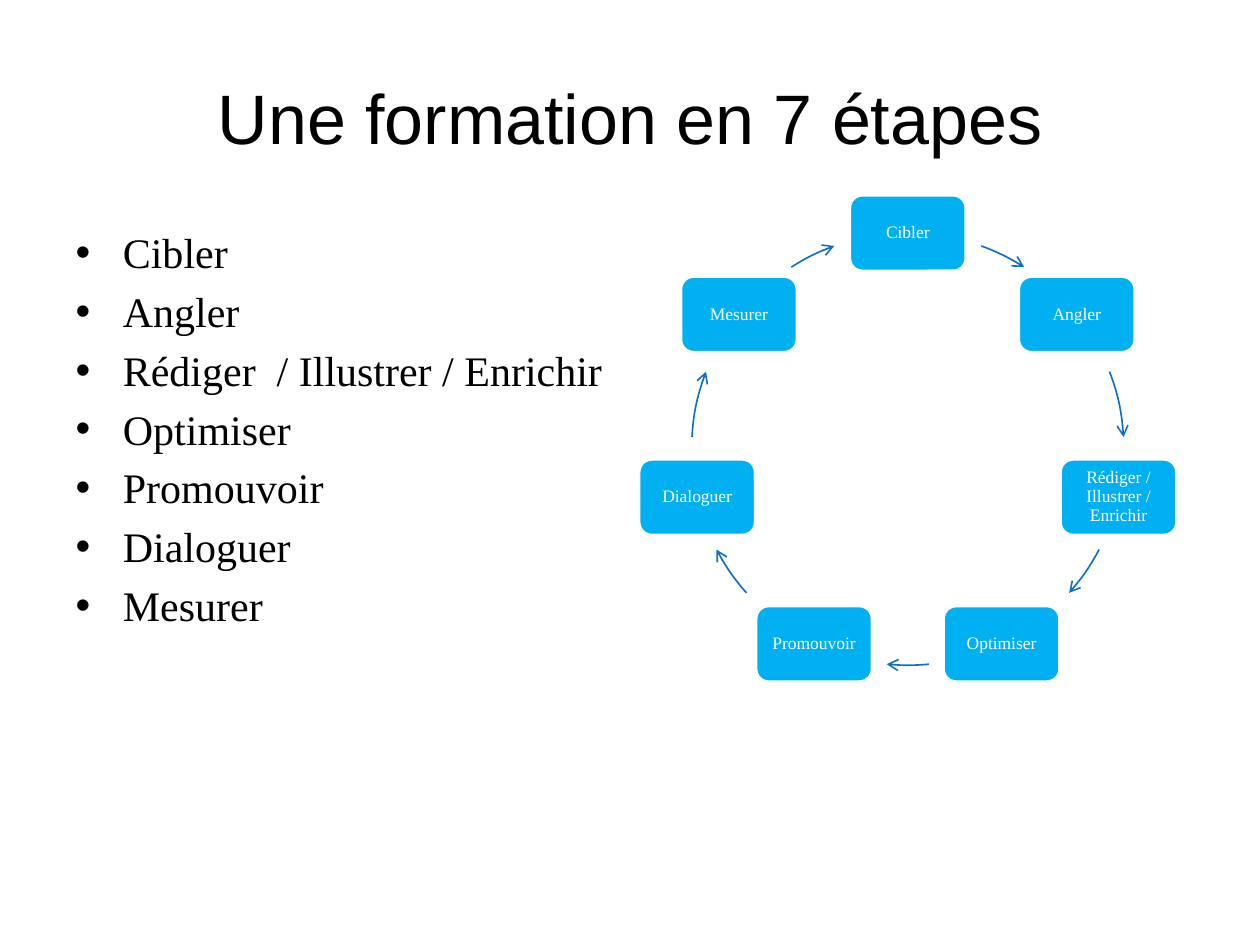
from math import cos, radians, sin

from lxml import etree
from pptx import Presentation
from pptx.dml.color import RGBColor
from pptx.enum.shapes import MSO_SHAPE
from pptx.enum.text import MSO_ANCHOR, PP_ALIGN
from pptx.oxml.ns import qn
from pptx.util import Inches, Pt

ROUND_BOX = MSO_SHAPE.ROUNDED_RECTANGLE
ARC = MSO_SHAPE.ARC
MIDDLE = MSO_ANCHOR.MIDDLE
CENTER = PP_ALIGN.CENTER

BLACK = RGBColor(0x00, 0x00, 0x00)
WHITE = RGBColor(0xFF, 0xFF, 0xFF)
SKY = RGBColor(0x00, 0xB0, 0xF0)
BLUE = RGBColor(0x0F, 0x6F, 0xC6)

SANS = "Arial"
SERIF = "Times New Roman"

COLUMNS, ROWS = 20, 30
CENTER_COL, CENTER_ROW = 14.41, 14.26
RADIUS_COLS, RADIUS_ROWS = 3.43, 6.86
BOX_COLS, BOX_ROWS = 1.84, 2.4

STEPS = ["Cibler", "Angler", "Rédiger / Illustrer / Enrichir", "Optimiser",
         "Promouvoir", "Dialoguer", "Mesurer"]
BULLETS = [step.replace("Rédiger", "Rédiger ") for step in STEPS]
RIGHT_ARCS = [(19.9, 32.6), (69, 86.8), (117.7, 131.7)]
BOTTOM_ARC = (174.4, 185.6)
LEFT_ARCS = [(360 - end, 360 - start) for start, end in reversed(RIGHT_ARCS)]
ARCS = RIGHT_ARCS + [BOTTOM_ARC] + LEFT_ARCS


def write(p, text, *, font=SERIF, size=24, color=BLACK, align=None, spacing=None):
    r = p.add_run()
    r.text = text
    r.font.name = font
    r.font.size = Pt(size)
    r.font.color.rgb = color
    p.alignment = align
    p.line_spacing = spacing


class Deck:
    def __init__(self):
        self.prs = Presentation()
        self.prs.slide_width = Inches(10)
        self.prs.slide_height = Inches(7.5)
        self.col = self.prs.slide_width / COLUMNS
        self.row = self.prs.slide_height / ROWS
        self.s = self.prs.slides.add_slide(self.prs.slide_layouts[1])

    def area(self, left, top, width, height):
        return (round(left * self.col), round(top * self.row),
                round(width * self.col), round(height * self.row))

    def place(self, sp, *cells):
        sp.left, sp.top, sp.width, sp.height = self.area(*cells)

    def title(self, text):
        sp = self.s.shapes.title
        self.place(sp, 1, 1.2, 18, 5)
        sp.text_frame.vertical_anchor = MIDDLE
        write(sp.text_frame.paragraphs[0], text, font=SANS, size=40, align=CENTER)

    def bullets(self, items):
        sp = self.s.placeholders[1]
        self.place(sp, 1, 7, 18, 19.8)
        tf = sp.text_frame
        for i, item in enumerate(items):
            p = tf.add_paragraph() if i else tf.paragraphs[0]
            write(p, item)

    def shape(self, kind, *cells):
        sp = self.s.shapes.add_shape(kind, *self.area(*cells))
        sp.shadow.inherit = False
        return sp

    def step(self, text, angle):
        left = CENTER_COL + RADIUS_COLS * sin(radians(angle)) - BOX_COLS / 2
        top = CENTER_ROW - RADIUS_ROWS * cos(radians(angle)) - BOX_ROWS / 2
        sp = self.shape(ROUND_BOX, left, top, BOX_COLS, BOX_ROWS)
        sp.fill.solid()
        sp.fill.fore_color.rgb = SKY
        sp.line.color.rgb = WHITE
        sp.line.width = Pt(1.5)
        tf = sp.text_frame
        tf.word_wrap = True
        tf.vertical_anchor = MIDDLE
        (tf.margin_left, tf.margin_top,
         tf.margin_right, tf.margin_bottom) = self.area(0.08, 0.16, 0.08, 0.16)
        write(tf.paragraphs[0], text, size=10, color=WHITE, align=CENTER, spacing=0.9)

    def arrow(self, start, end):
        sp = self.shape(ARC, CENTER_COL - RADIUS_COLS, CENTER_ROW - RADIUS_ROWS,
                        2 * RADIUS_COLS, 2 * RADIUS_ROWS)
        for i, angle in enumerate((start, end)):
            sp.adjustments[i] = (angle - 90) % 360 * 0.6
        sp.fill.background()
        sp.line.color.rgb = BLUE
        sp.line.width = Pt(0.94)
        ln = sp.element.spPr.find(qn("a:ln"))
        etree.SubElement(ln, qn("a:tailEnd"), type="arrow")

    def cycle(self, steps, arcs):
        for i, (text, arc) in enumerate(zip(steps, arcs)):
            self.step(text, 360 * i / len(steps))
            self.arrow(*arc)


def main():
    deck = Deck()
    deck.title("Une formation en 7 étapes")
    deck.bullets(BULLETS)
    deck.cycle(STEPS, ARCS)
    deck.prs.save("out.pptx")


if __name__ == "__main__":
    main()
